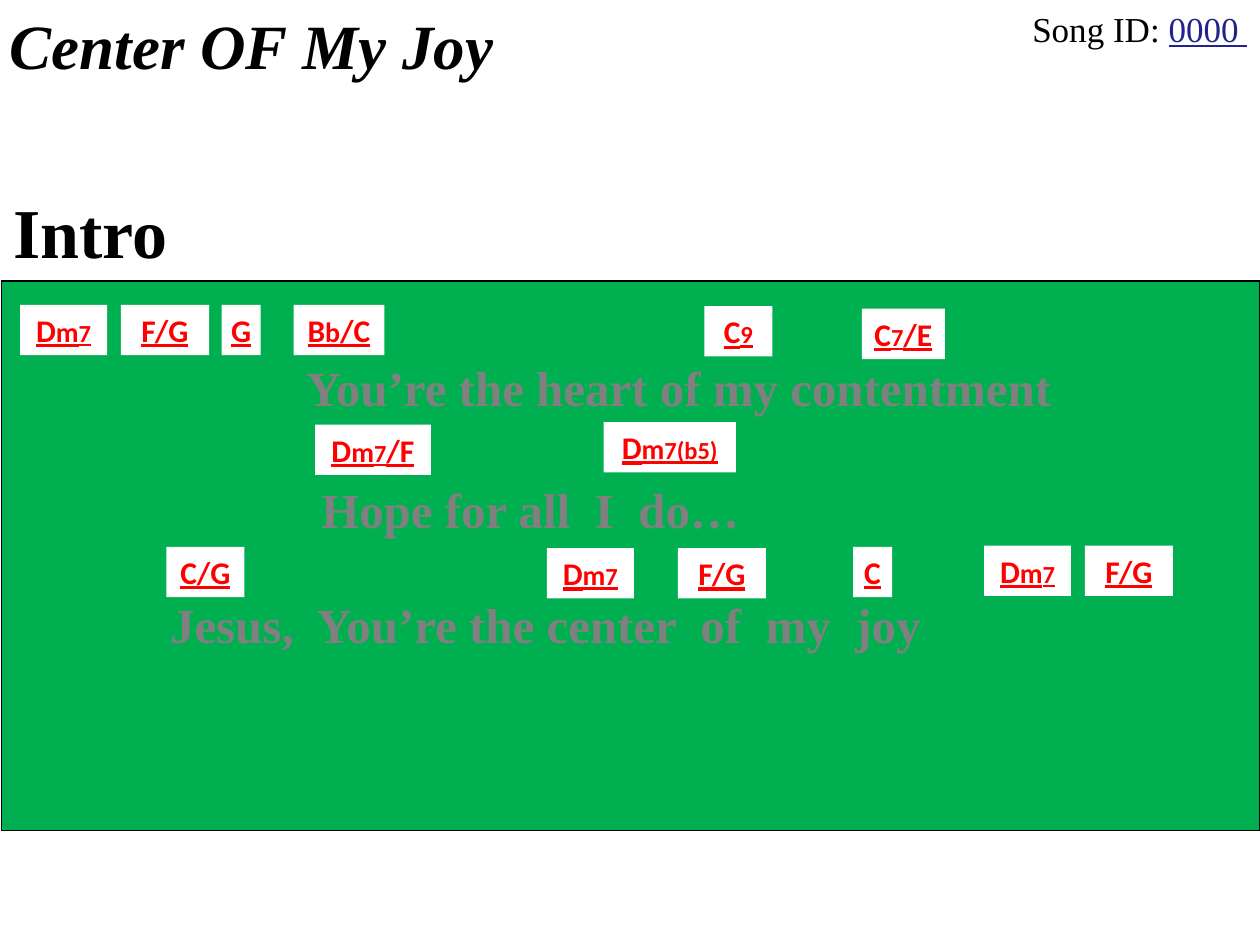
from pptx import Presentation
from pptx.dml.color import RGBColor
from pptx.enum.shapes import MSO_SHAPE as Shape
from pptx.enum.text import MSO_ANCHOR as Anchor, PP_ALIGN as Align
from pptx.util import Inches, Pt

SERIF = "Times New Roman"
presentation = Presentation()
presentation.slide_width, presentation.slide_height = Inches(10), Inches(7.5)
slide = presentation.slides.add_slide(presentation.slide_layouts[6])


def add_box(left, top, width, height, fill="FFFFFF"):
    shape = slide.shapes.add_shape(
        Shape.RECTANGLE, Inches(left), Inches(top), Inches(width), Inches(height))
    shape.shadow.inherit = False
    shape.fill.solid()
    shape.fill.fore_color.rgb = RGBColor.from_string(fill)
    shape.line.fill.background()
    shape.text_frame.vertical_anchor = Anchor.TOP
    shape.text_frame.paragraphs[0].alignment = Align.LEFT
    return shape


def add_run(shape, text, size, color="000000", font=SERIF, **style):
    run = shape.text_frame.paragraphs[0].add_run()
    run.text = text
    run.font.size, run.font.name = Pt(size), font
    run.font.color.rgb = RGBColor.from_string(color)
    for name, value in style.items():
        setattr(run.font, name, value)


# Title and song number
title = add_box(-0.02, 0, 7.61, 0.71)
add_run(title, "Center OF My Joy", 36, bold=True, italic=True)
song_id = add_box(6.01, 0.01, 3.99, 0.44)
song_id.text_frame.paragraphs[0].alignment = Align.RIGHT
add_run(song_id, "Song ID: ", 20)
add_run(song_id, "0000 ", 20, "22228B", underline=True)

# Green panel and section heading
panel = add_box(0.01, 2.23, 9.99, 4.36, "00B050")
panel.line.color.rgb = RGBColor.from_string("000000")
panel.line.width = Pt(0.75)
heading = add_box(0.01, 1.45, 3.33, 0.77)
add_run(heading, "Intro", 40, bold=True)

# Lyrics: left, top, indent, words
lyrics = [
    (0, 2.79, 2.33, "You’re the heart of my contentment"),
    (0.02, 3.76, 2.43, "Hope for all  I  do…"),
    (-0.01, 4.67, 1.26, "Jesus,  You’re the center  of  my  joy"),
]
for left, top, indent, words in lyrics:
    lyric = slide.shapes.add_textbox(
        Inches(left), Inches(top), Inches(10.03), Inches(0.57))
    lyric.text_frame.word_wrap = True
    lyric.text_frame.margin_left = Inches(0.1 + indent)
    add_run(lyric, words, 28, "808080", bold=True)

# Chords: left, top, width, parts of the name
chords = [
    (0.16, 2.42, 0.69, "D m 7"), (0.96, 2.42, 0.7, "F/G"),
    (1.76, 2.42, 0.31, "G"), (2.33, 2.42, 0.72, "B b /C"),
    (5.59, 2.43, 0.54, "C 9"), (6.84, 2.45, 0.66, "C 7 /E"),
    (2.5, 3.37, 0.92, "D m 7 /F"), (4.79, 3.35, 1.05, "D m 7(b5)"),
    (1.32, 4.34, 0.62, "C/G"), (4.34, 4.35, 0.69, "D m 7"),
    (5.38, 4.35, 0.7, "F/G"), (6.77, 4.34, 0.31, "C"),
    (7.81, 4.33, 0.69, "D m 7"), (8.61, 4.33, 0.7, "F/G"),
]
for left, top, width, parts in chords:
    chord = add_box(left, top, width, 0.4)
    chord.text_frame.word_wrap = False
    chord.text_frame.paragraphs[0].alignment = Align.CENTER
    for part in parts.split():
        # Roots and basses are largest, extensions smallest
        size = 14 if part[0].isdigit() else 16 if part in "mb" else 18
        add_run(chord, part, size, "FF0000", "Calibri", bold=True, underline=True)

presentation.save("out.pptx")
